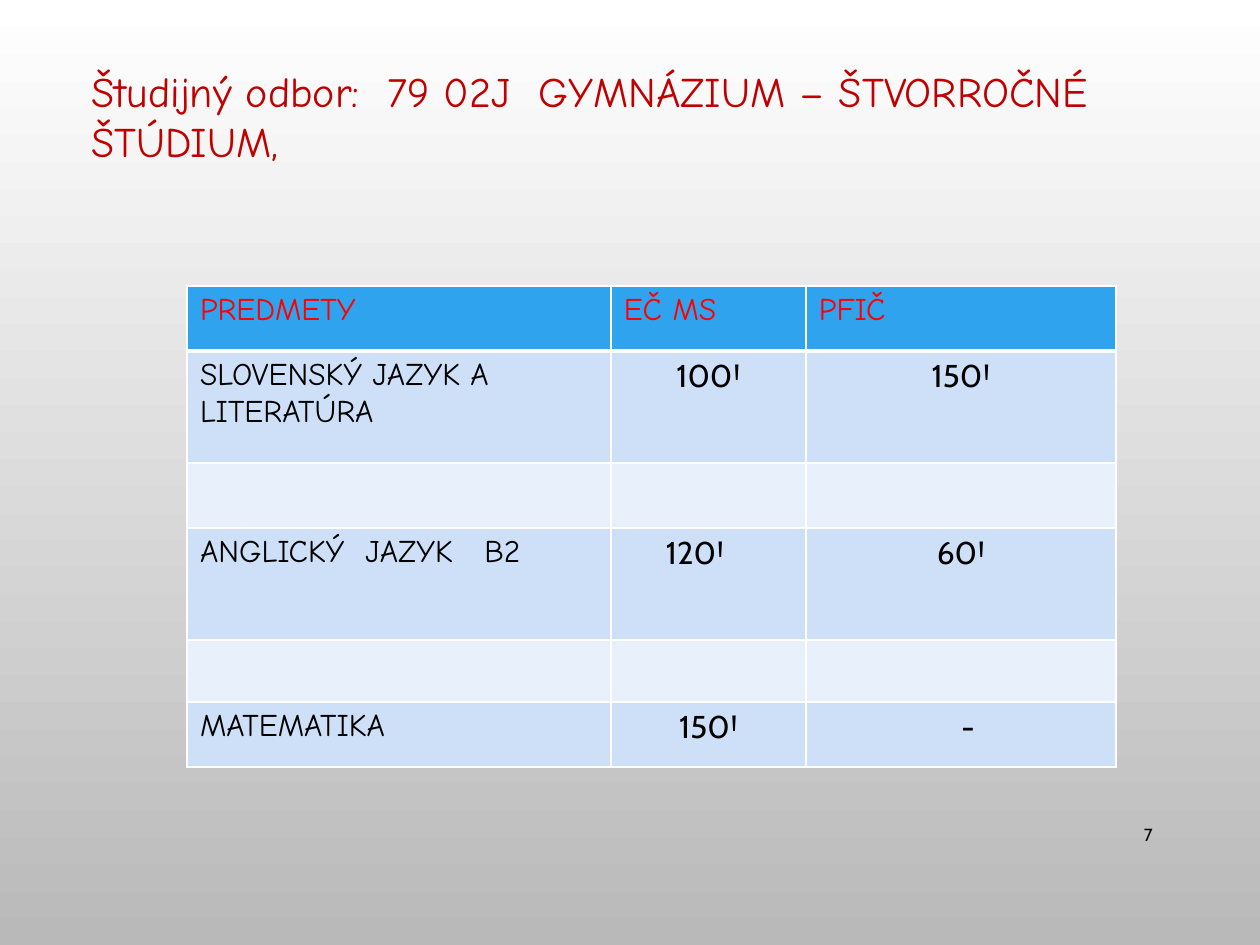
from dataclasses import dataclass
from lxml import etree
from pptx import Presentation, util as u
from pptx.dml.color import RGBColor
from pptx.enum import text
from pptx.oxml import ns

EMU_PER_PX = 914400 / 126
WHITE = RGBColor(0xFF, 0xFF, 0xFF)
GREY = RGBColor(0xB9, 0xB9, 0xB9)
BLACK = RGBColor(0, 0, 0)
RED = RGBColor(0xFF, 0, 0)
DARK_RED = RGBColor(0xC0, 0, 0)
HEADER_BLUE = RGBColor(0x2F, 0xA3, 0xEE)
BANDS = (RGBColor(0xE8, 0xF0, 0xFC), RGBColor(0xCD, 0xE0, 0xF8))
HAND, SANS = "Comic Neue", "Cabin"
LEFT, CENTER, RIGHT = text.PP_ALIGN.LEFT, text.PP_ALIGN.CENTER, text.PP_ALIGN.RIGHT
COLUMNS = (424, 195, 310)


@dataclass(frozen=True)
class Entry:
    content: str = ""
    align: text.PP_ALIGN = CENTER
    margin: int = 13


@dataclass(frozen=True)
class Row:
    height: int
    subject: str = ""
    external: Entry = Entry()
    internal: Entry = Entry()


ROWS = (
    Row(65, "PREDMETY", Entry("EČ MS", LEFT), Entry("PFIČ", LEFT)),
    Row(112, "SLOVENSKÝ JAZYK A LITERATÚRA", Entry("100Ꞌ"), Entry("150Ꞌ")),
    Row(65),
    Row(112, "ANGLICKÝ  JAZYK   B2", Entry("120Ꞌ", LEFT, 55), Entry("60Ꞌ")),
    Row(62),
    Row(65, "MATEMATIKA", Entry("150Ꞌ"), Entry("-", CENTER, 27)),
)


def px(n: int) -> u.Emu:
    return u.Emu(round(n * EMU_PER_PX))


def write(tf, content: str, font: str, size: int, color: RGBColor,
          align: text.PP_ALIGN) -> None:
    p = tf.paragraphs[0]
    p.text = content
    p.alignment = align
    for r in p.runs:
        r.font.name, r.font.size = font, u.Pt(size)
        r.font.color.rgb = color


def set_borders(cell, top: int, bottom: int) -> None:
    tc_pr = cell._tc.get_or_add_tcPr()
    for side, width in (("L", 1), ("R", 1), ("T", top), ("B", bottom)):
        ln = etree.SubElement(tc_pr, ns.qn(f"a:ln{side}"), w=str(int(u.Pt(width))))
        fill = etree.SubElement(ln, ns.qn("a:solidFill"))
        etree.SubElement(fill, ns.qn("a:srgbClr"), val=str(WHITE))


def draw_table(s) -> None:
    table = s.shapes.add_table(len(ROWS), len(COLUMNS), px(187), px(286),
                               px(sum(COLUMNS)), px(sum(r.height for r in ROWS))).table
    for column, width in zip(table.columns, COLUMNS):
        column.width = px(width)
    for i, row in enumerate(ROWS):
        table.rows[i].height = px(row.height)
        header = i == 0
        for j, entry in enumerate((Entry(row.subject, LEFT), row.external, row.internal)):
            cell = table.cell(i, j)
            # A thick line parts the header from the first row
            set_borders(cell, top=3 if i == 1 else 1, bottom=3 if header else 1)
            cell.fill.solid()
            cell.fill.fore_color.rgb = HEADER_BLUE if header else BANDS[i % 2]
            cell.margin_left = px(entry.margin)
            write(cell.text_frame, entry.content, HAND if header or j == 0 else SANS, 18,
                  RED if header else BLACK, entry.align)
            # The header style is bold by default
            cell.text_frame.paragraphs[0].font.bold = False
    table.first_row = False


def main() -> None:
    prs = Presentation()
    prs.slide_width, prs.slide_height = px(1260), px(945)
    s = prs.slides.add_slide(prs.slide_layouts[5])

    # Background, white at the top
    bg = s.background.fill
    bg.gradient()
    bg.gradient_angle = 270
    for stop, color, position in zip(bg.gradient_stops, (WHITE, GREY), (0, 1)):
        stop.color.rgb, stop.position = color, position

    # Title
    title = s.shapes.title
    title.left, title.top, title.width, title.height = px(79), px(59), px(1122), px(165)
    tf = title.text_frame
    tf.vertical_anchor = text.MSO_ANCHOR.TOP
    tf.auto_size = text.MSO_AUTO_SIZE.NONE
    write(tf, "Študijný odbor:  79 02J  GYMNÁZIUM – ŠTVORROČNÉ ŠTÚDIUM,",
          HAND, 24, DARK_RED, LEFT)

    # Subjects and exam times
    draw_table(s)

    # Page number
    sp = s.shapes.add_textbox(px(1086), px(810), px(79), px(50))
    sp.text_frame.word_wrap = True
    sp.text_frame.vertical_anchor = text.MSO_ANCHOR.MIDDLE
    write(sp.text_frame, "7", SANS, 10, BLACK, RIGHT)

    prs.save("out.pptx")


if __name__ == "__main__":
    main()
